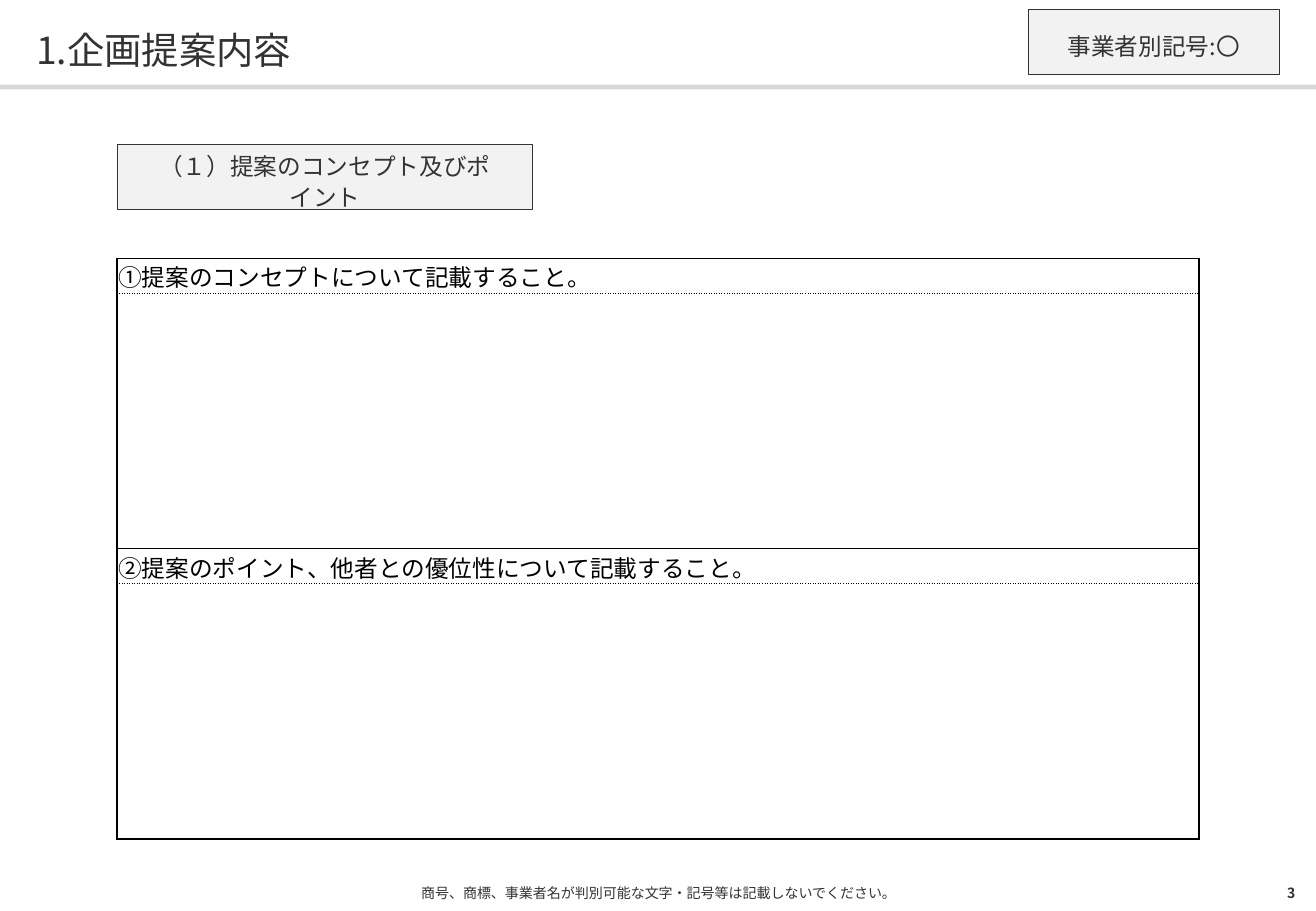
import pptx
import pptx.util
import pptx.dml.color
import pptx.enum.lang
import pptx.enum.shapes
import pptx.enum.text
import pptx.oxml
import pptx.oxml.ns
from pptx.util import Cm

FACE = "Noto Sans CJK JP"
INK, PALE, BLACK = "333333", "F2F2F2", "000000"
LEFT = 2.45
ALIGN = pptx.enum.text.PP_ALIGN
MIDDLE = pptx.enum.text.MSO_ANCHOR.MIDDLE
RECT = pptx.enum.shapes.MSO_SHAPE.RECTANGLE


def tint(code):
    """Turn a hex string into a colour."""
    return pptx.dml.color.RGBColor.from_string(code)


def write(frame, text, size=14, color=INK, bold=False, align=ALIGN.LEFT, space=None):
    """Put one formatted line of text in a frame."""
    para = frame.paragraphs[0]
    para.alignment = align
    if space:
        para.line_spacing = space
    run = para.add_run()
    run.text = text
    font = run.font
    font.name, font.size, font.bold = FACE, pptx.util.Pt(size), bold
    font.color.rgb = tint(color)
    font.language_id = pptx.enum.lang.MSO_LANGUAGE_ID.JAPANESE
    east = pptx.oxml.parse_xml(
        f'<a:ea {pptx.oxml.ns.nsdecls("a")} typeface="{FACE}"/>')
    font._element.find(pptx.oxml.ns.qn("a:latin")).addnext(east)


def fit(frame, side=0, top=0, base=0):
    """Wrap a frame, centre it upright and set its margins."""
    frame.word_wrap = True
    frame.vertical_anchor = MIDDLE
    frame.margin_left = frame.margin_right = Cm(side)
    frame.margin_top, frame.margin_bottom = Cm(top), Cm(base)


def label(slide, box, text, **form):
    """Add plain text in a box."""
    frame = slide.shapes.add_textbox(*map(Cm, box)).text_frame
    fit(frame)
    write(frame, text, **form)


def block(slide, box, fill, line=None):
    """Add a flat rectangle."""
    shape = slide.shapes.add_shape(RECT, *map(Cm, box))
    shape.shadow.inherit = False
    shape.fill.solid()
    shape.fill.fore_color.rgb = tint(fill)
    if line:
        shape.line.color.rgb = tint(line)
        shape.line.width = pptx.util.Pt(0.5)
    else:
        shape.line.fill.background()
    return shape


def badge(slide, box, text, side=0.71):
    """Add a pale framed heading."""
    frame = block(slide, box, PALE, INK).text_frame
    fit(frame, side, 0.41, 0.3)
    write(frame, text, align=ALIGN.CENTER, space=1.1)


def edge(cell, dotted):
    """Frame a cell in black, with one side dotted."""
    props = cell._tc.get_or_add_tcPr()
    for spot, side in enumerate("LRTB"):
        width, dash = (0.5, "sysDot") if side == dotted else (1, "solid")
        props.insert(spot, pptx.oxml.parse_xml(
            f'<a:ln{side} {pptx.oxml.ns.nsdecls("a")} w="{pptx.util.Pt(width)}">'
            f'<a:solidFill><a:srgbClr val="{BLACK}"/></a:solidFill>'
            f'<a:prstDash val="{dash}"/></a:ln{side}>'))


def form(slide, box, heads, thin=0.73):
    """Add a one-column form with an empty answer row under each heading."""
    count = len(heads)
    table = slide.shapes.add_table(2 * count, 1, *map(Cm, box)).table
    table.first_row = table.horz_banding = False
    tall = box[3] / count - thin
    for spot, row in enumerate(table.rows):
        head = spot % 2 == 0
        row.height = Cm(thin if head else tall)
        cell = row.cells[0]
        cell.fill.background()
        edge(cell, "B" if head else "T")
        if head:
            cell.vertical_anchor = MIDDLE
            cell.margin_left = cell.margin_top = cell.margin_right = Cm(0.02)
            cell.margin_bottom = 0
            write(cell.text_frame, heads[spot // 2], color=BLACK)


def top(slide, box):
    """Add the title, the code box and the rule below them."""
    left, high, wide, tall = box
    block(slide, (left, high + tall - 0.1, wide, 0.1), "D9D9D9")
    label(slide, (left + 0.76, high + 0.44, wide - 1.5, 1.09),
          "1.企画提案内容", size=22.1, space=1.1)
    badge(slide, (left + wide - 6.02, high + 0.19, 5.26, 1.37),
          "事業者別記号:〇", side=0.5)


def body(slide, box):
    """Add the section heading and the form."""
    left, high, wide, tall = box
    badge(slide, (left, high, 8.69, 1.37), "（１）提案のコンセプト及びポイント")
    form(slide, (left, high + 2.38, wide, tall - 2.38),
         ["①提案のコンセプトについて記載すること。",
          "②提案のポイント、他者との優位性について記載すること。"])


def foot(slide, box):
    """Add the footnote and the page number."""
    left, high, wide, tall = box
    label(slide, (left + 2.26, high, wide - 4.5, tall),
          "商号、商標、事業者名が判別可能な文字・記号等は記載しないでください。",
          size=8.3, align=ALIGN.CENTER)
    label(slide, (left + wide - 1.75, high, 1.32, tall), "3",
          size=8.3, bold=True, align=ALIGN.RIGHT)


def main():
    """Build and save the slide."""
    deck = pptx.Presentation()
    wide = 27.51
    deck.slide_width, deck.slide_height = Cm(wide), Cm(19.05)
    slide = deck.slides.add_slide(deck.slide_layouts[6])
    top(slide, (0, 0, wide, 1.87))
    body(slide, (LEFT, 3.02, 22.61, 14.52))
    foot(slide, (0, 18.31, wide, 0.72))
    deck.save("out.pptx")


if __name__ == "__main__":
    main()
